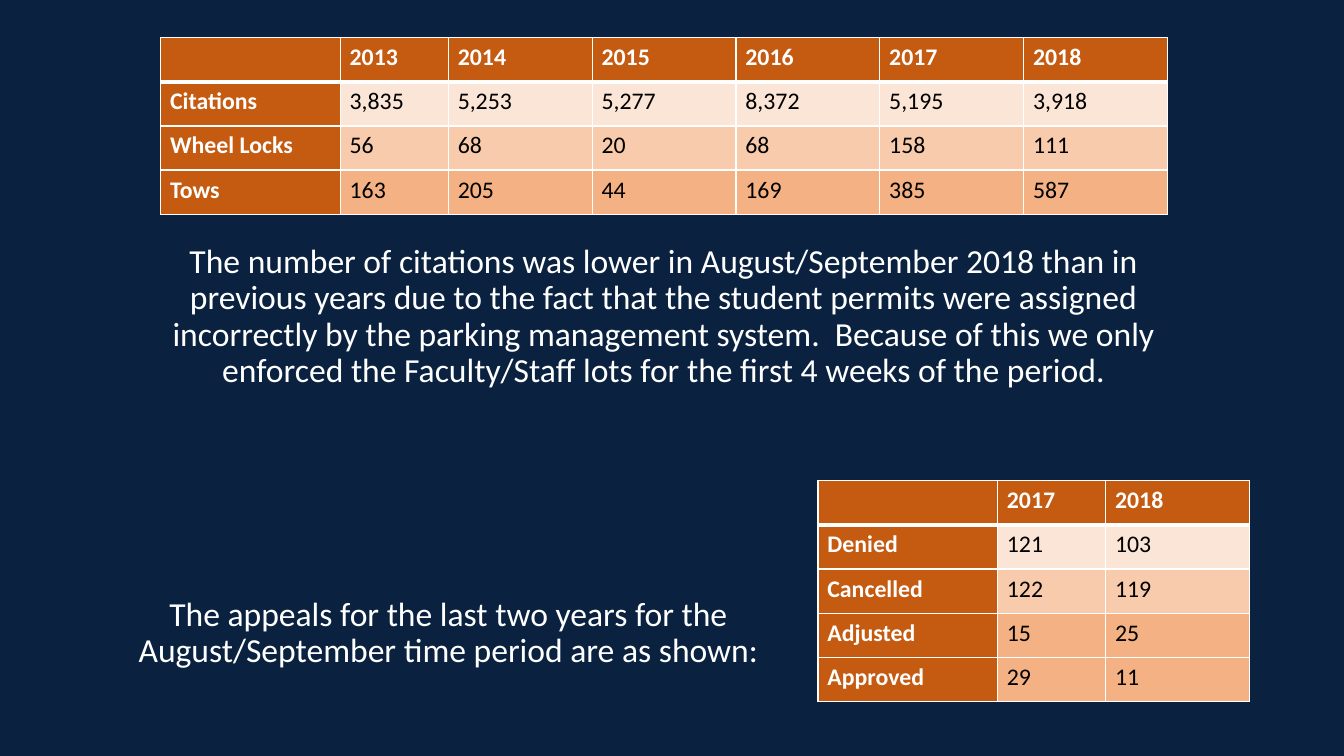
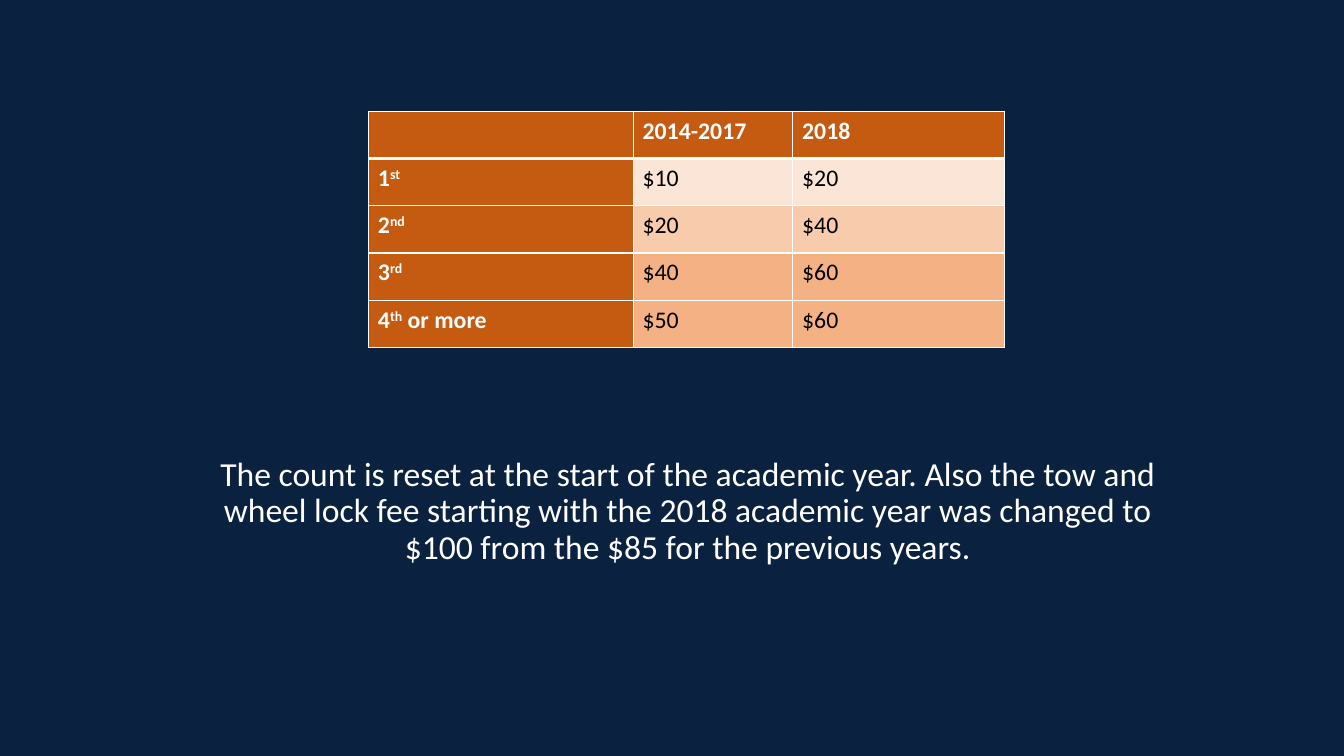
from lxml.etree import SubElement
from pptx import Presentation
from pptx.dml.color import RGBColor
from pptx.enum.text import MSO_ANCHOR, MSO_AUTO_SIZE, PP_ALIGN
from pptx.oxml.ns import qn
from pptx.util import Pt

EMU_PER_PX = 9525
FONT = "Calibri"
COLORS = {
    "navy": "0A2240",
    "white": "FFFFFF",
    "black": "000000",
    "header": "C55A11",
    "light": "FBE5D6",
    "medium": "F8CBAD",
    "strong": "F4B183",
}
ROW_FILLS = ["header", "light", "medium", "strong", "strong"]
BODY_SIZE = 24
CELL_SIZE = 17
THIN, THICK = 1, 3
APPEAL_COLS = [171, 103, 137]
COUNT_COLS = APPEAL_COLS + [137] * 4
FEE_COLS = [252, 152, 202]

COUNTS = [
    ["", "2013", "2014", "2015", "2016", "2017", "2018"],
    ["Citations", "3,835", "5,253", "5,277", "8,372", "5,195", "3,918"],
    ["Wheel Locks", "56", "68", "20", "68", "158", "111"],
    ["Tows", "163", "205", "44", "169", "385", "587"],
]
APPEALS = [
    ["", "2017", "2018"],
    ["Denied", "121", "103"],
    ["Cancelled", "122", "119"],
    ["Adjusted", "15", "25"],
    ["Approved", "29", "11"],
]
FEES = [
    ["", "2014-2017", "2018"],
    [("1", "st"), "$10", "$20"],
    [("2", "nd"), "$20", "$40"],
    [("3", "rd"), "$40", "$60"],
    [("4", "th", " or more"), "$50", "$60"],
]


def px(n):
    return n * EMU_PER_PX


def rgb(name):
    return RGBColor.from_string(COLORS[name])


def add_run(p, text, size, color, bold=False):
    r = p.add_run()
    r.text = text
    r.font.name = FONT
    r.font.size = Pt(size)
    r.font.bold = bold
    r.font.color.rgb = rgb(color)
    return r


def write_paragraph(sp, text):
    tf = sp.text_frame
    tf.word_wrap = True
    tf.auto_size = MSO_AUTO_SIZE.NONE
    tf.vertical_anchor = MSO_ANCHOR.TOP
    p = tf.paragraphs[0]
    p.alignment = PP_ALIGN.CENTER
    p.line_spacing = 0.9
    p.space_before = Pt(10)
    add_run(p, text, BODY_SIZE, "white")


def place_subtitle(s, box, text):
    sp = s.placeholders[1]
    sp.left, sp.top, sp.width, sp.height = map(px, box)
    write_paragraph(sp, text)


def add_note(s, box, text):
    write_paragraph(s.shapes.add_textbox(*map(px, box)), text)


def set_borders(cell, row):
    tcPr = cell._tc.get_or_add_tcPr()
    widths = {
        "lnL": THIN,
        "lnR": THIN,
        "lnT": THICK if row == 1 else THIN,
        "lnB": THICK if row == 0 else THIN,
    }
    for tag, width in widths.items():
        ln = SubElement(tcPr, qn(f"a:{tag}"), w=str(Pt(width)))
        fill = SubElement(ln, qn("a:solidFill"))
        SubElement(fill, qn("a:srgbClr"), val=COLORS["white"])


def format_cell(cell, row, col, content):
    is_header = row == 0 or col == 0
    set_borders(cell, row)
    cell.fill.solid()
    cell.fill.fore_color.rgb = rgb("header" if is_header else ROW_FILLS[row])
    cell.margin_left = cell.margin_right = px(9)
    cell.margin_top = cell.margin_bottom = px(5)
    parts = (content,) if isinstance(content, str) else content
    p = cell.text_frame.paragraphs[0]
    for i, part in enumerate(parts):
        if part:
            r = add_run(p, part, CELL_SIZE, "white" if is_header else "black", is_header)
            if i % 2:
                r._r.get_or_add_rPr().set("baseline", "30000")


def add_data_table(s, left, top, col_widths, row_height, rows):
    width, height = sum(col_widths), row_height * len(rows)
    frame = s.shapes.add_table(
        len(rows), len(col_widths), px(left), px(top), px(width), px(height)
    )
    table = frame.table
    table.horz_banding = False
    table.first_col = True
    for column, col_width in zip(table.columns, col_widths):
        column.width = px(col_width)
    for i, values in enumerate(rows):
        table.rows[i].height = px(row_height)
        for j, content in enumerate(values):
            format_cell(table.cell(i, j), i, j, content)


def add_subtitle_slide(prs):
    s = prs.slides.add_slide(prs.slide_layouts[0])
    title = s.shapes.title.element
    title.getparent().remove(title)
    return s


def add_citations_slide(prs):
    s = add_subtitle_slide(prs)
    place_subtitle(
        s,
        (152, 228, 960, 171),
        "The number of citations was lower in August/September 2018 than in "
        "previous years due to the fact that the student permits were assigned "
        "incorrectly by the parking management system.  Because of this we only "
        "enforced the Faculty/Staff lots for the first 4 weeks of the period.",
    )
    add_data_table(s, 153, 36, COUNT_COLS, 42, COUNTS)
    add_data_table(s, 779, 458, APPEAL_COLS, 42, APPEALS)
    add_note(
        s,
        (121, 564, 612, 156),
        "The appeals for the last two years for the August/September "
        "time period are as shown:",
    )


def add_fees_slide(prs):
    s = add_subtitle_slide(prs)
    place_subtitle(
        s,
        (175, 431, 960, 171),
        "The count is reset at the start of the academic year. Also the tow and "
        "wheel lock fee starting with the 2018 academic year was changed to "
        "$100 from the $85 for the previous years.",
    )
    add_data_table(s, 351, 106, FEE_COLS, 45, FEES)


def main():
    prs = Presentation()
    prs.slide_width, prs.slide_height = px(1280), px(720)
    background = prs.slide_master.background.fill
    background.solid()
    background.fore_color.rgb = rgb("navy")
    add_citations_slide(prs)
    add_fees_slide(prs)
    prs.save("out.pptx")


if __name__ == "__main__":
    main()
